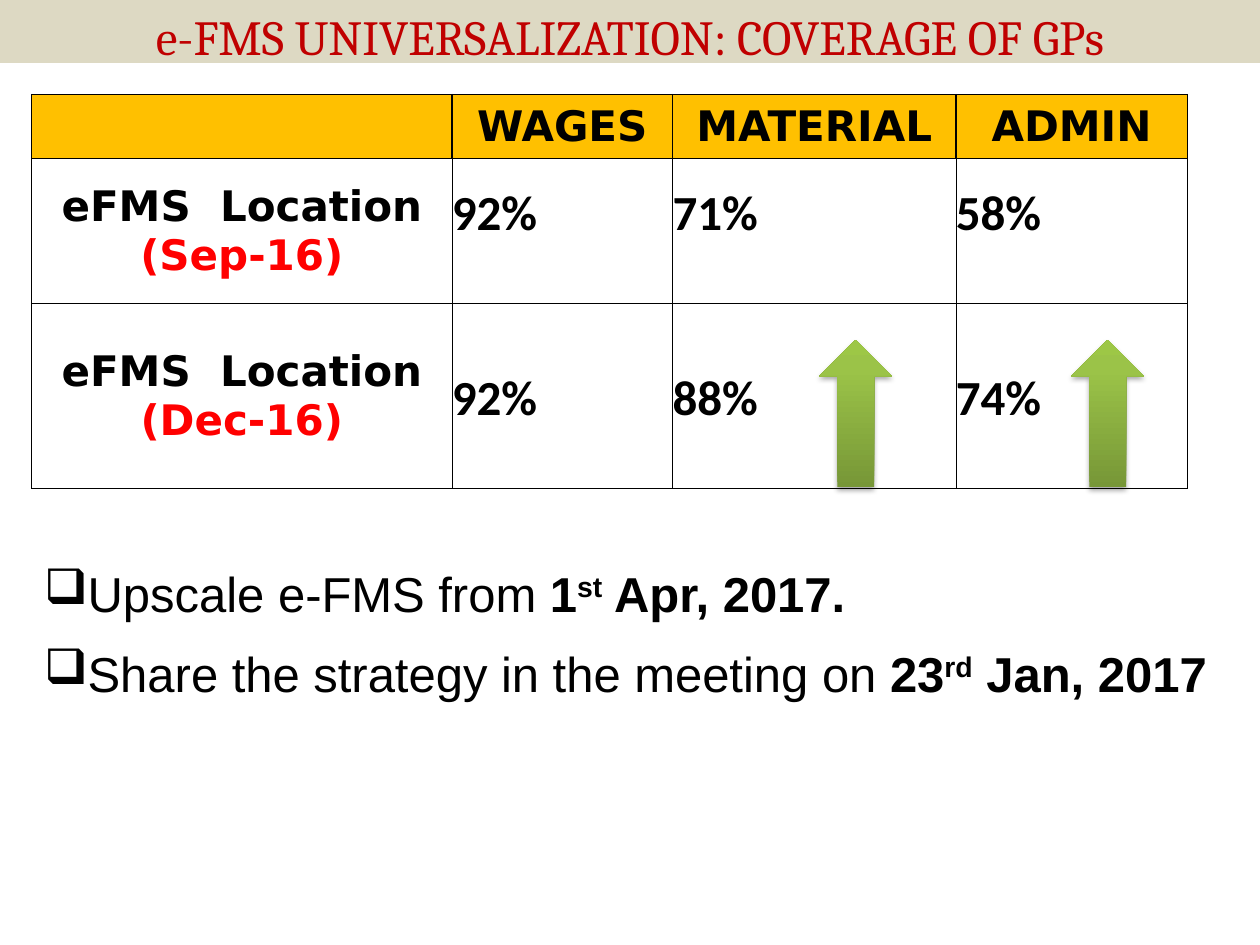
from dataclasses import dataclass
from lxml.etree import SubElement
from pptx import Presentation
from pptx.dml.color import RGBColor as Rgb
from pptx.enum.shapes import MSO_SHAPE as Shape
from pptx.enum.text import MSO_ANCHOR as Anchor, PP_ALIGN as Align
from pptx.oxml import parse_xml
from pptx.oxml.ns import nsdecls, qn
from pptx.util import Cm, Pt


@dataclass(frozen=True)
class Theme:
    """Colours, fonts and type sizes of the slide."""
    band: str = "DDD9C3"
    title: str = "C00000"
    head: str = "FFC000"
    ink: str = "000000"
    date: str = "FF0000"
    ramp: tuple = ((0, "779737"), (80, "9BC348"), (100, "9DC746"))
    serif: str = "Cambria"
    label: str = "DejaVu Sans"
    value: str = "Calibri"
    body: str = "Arial"
    big: int = 28
    mid: int = 24


@dataclass(frozen=True)
class Box:
    """A region in centimetres."""
    x: float
    y: float
    w: float
    h: float

    def emu(self):
        """Return the region as slide lengths."""
        return [Cm(v) for v in (self.x, self.y, self.w, self.h)]


THEME = Theme()
HEADS = ("", "WAGES", "MATERIAL", "ADMIN")
ROWS = (("(Sep-16)", "92%", "71%", "58%"), ("(Dec-16)", "92%", "88%", "74%"))
COLS = (8.47, 4.45, 5.71, 4.66)
TALL = (1.3, 2.92, 3.73)
NOTES = (
    ("Upscale e-FMS from ", "1", "st", " Apr, 2017."),
    ("Share the strategy in the meeting on ", "23", "rd", " Jan, 2017"),
)


def put(item, **vals):
    """Set each named attribute on an item."""
    for name, val in vals.items():
        setattr(item, name, val)


def paint(item, color):
    """Fill an item with one colour."""
    item.fill.solid()
    item.fill.fore_color.rgb = Rgb.from_string(color)


def write(para, text, font, size, color=THEME.ink, bold=False):
    """Add a styled run to a paragraph."""
    run = para.add_run()
    run.text = text
    put(run.font, name=font, size=Pt(size), bold=bold)
    run.font.color.rgb = Rgb.from_string(color)
    return run


def edge(cell, sides):
    """Draw cell borders from a dict of side and width."""
    props = cell._tc.get_or_add_tcPr()
    for spot, (side, width) in enumerate(sides.items()):
        line = parse_xml(
            f'<a:ln{side} {nsdecls("a")} w="{Pt(width)}"><a:solidFill>'
            f'<a:srgbClr val="{THEME.ink}"/></a:solidFill></a:ln{side}>')
        props.insert(spot, line)


def add_title(slide, box):
    """Place the title band."""
    title = slide.shapes.title
    put(title, **dict(zip(("left", "top", "width", "height"), box.emu())))
    paint(title, THEME.band)
    frame = title.text_frame
    put(frame, word_wrap=True, vertical_anchor=Anchor.TOP,
        margin_top=Cm(0.13), margin_bottom=0)
    para = frame.paragraphs[0]
    para.alignment = Align.CENTER
    write(para, "e-FMS UNIVERSALIZATION: COVERAGE OF GPs",
          THEME.serif, THEME.big, THEME.title)


def fill_cell(cell, row, col, text):
    """Write and format one table cell."""
    value = row > 0 and col > 0
    put(cell, margin_left=0, margin_right=0, margin_top=0,
        margin_bottom=Cm(1.2) if value else 0,
        vertical_anchor=Anchor.BOTTOM if value else Anchor.MIDDLE)
    para = cell.text_frame.paragraphs[0]
    para.alignment = Align.LEFT if value else Align.CENTER
    if value:
        write(para, text, THEME.value, THEME.big, bold=True)
    elif row:
        write(para, "eFMS  Location ", THEME.label, THEME.mid, bold=True)
        write(para, text, THEME.label, THEME.mid, THEME.date, True)
    elif text:
        write(para, text, THEME.label, THEME.mid, bold=True)
    if row:
        cell.fill.background()
    else:
        paint(cell, THEME.head)
    edge(cell, {
        "L": 1 if col == 0 or row == 0 else 0.5,
        "R": 1 if row == 0 and col < len(COLS) - 1 else 0.5,
        "T": 0.5,
        "B": 1 if row == len(TALL) - 1 else 0.5,
    })


def add_grid(slide, box):
    """Place the coverage table and its rise arrows."""
    table = slide.shapes.add_table(len(TALL), len(COLS), *box.emu()).table
    put(table, first_row=False, horz_banding=False)
    for col, width in zip(table.columns, COLS):
        col.width = Cm(width)
    for row, height in zip(table.rows, TALL):
        row.height = Cm(height)
    for row, texts in enumerate((HEADS, *ROWS)):
        for col, text in enumerate(texts):
            fill_cell(table.cell(row, col), row, col, text)
    for step in range(2):
        add_rise(slide, Box(box.x + 15.87 + 5.08 * step, box.y + 4.95, 1.48, 2.97))


def add_rise(slide, box):
    """Place one shaded up arrow."""
    arrow = slide.shapes.add_shape(Shape.UP_ARROW, *box.emu())
    arrow.line.fill.background()
    stops = "".join(
        f'<a:gs pos="{pos * 1000}"><a:srgbClr val="{color}"/></a:gs>'
        for pos, color in THEME.ramp)
    props = arrow._element.spPr
    props.insert(2, parse_xml(
        f'<a:gradFill {nsdecls("a")} rotWithShape="1"><a:gsLst>{stops}</a:gsLst>'
        '<a:lin ang="16200000" scaled="0"/></a:gradFill>'))
    props.append(parse_xml(
        f'<a:effectLst {nsdecls("a")}><a:outerShdw blurRad="{Pt(3.1)}" '
        f'dist="{Pt(1.8)}" dir="5400000" rotWithShape="0">'
        f'<a:srgbClr val="{THEME.ink}"><a:alpha val="35000"/></a:srgbClr>'
        '</a:outerShdw></a:effectLst>'))


def add_notes(slide, box):
    """Place the bulleted next steps."""
    frame = slide.shapes.add_textbox(*box.emu()).text_frame
    frame.word_wrap = True
    for spot, (lead, day, mark, rest) in enumerate(NOTES):
        para = frame.add_paragraph() if spot else frame.paragraphs[0]
        put(para, alignment=Align.JUSTIFY, space_before=Pt(6), space_after=Pt(6))
        props = para._p.get_or_add_pPr()
        props.set("marL", str(Cm(0.79)))
        props.set("indent", str(-Cm(0.79)))
        SubElement(props, qn("a:buChar"), char="❑")
        write(para, lead, THEME.body, THEME.big)
        for text in (day, mark, rest):
            run = write(para, text, THEME.body, THEME.big, bold=True)
            if text == mark:
                run._r.get_or_add_rPr().set("baseline", "30000")


def main():
    """Build and save the slide."""
    deck = Presentation()
    put(deck, slide_width=Cm(25.4), slide_height=Cm(19.05))
    slide = deck.slides.add_slide(deck.slide_layouts[5])
    add_title(slide, Box(0, 0, 25.4, 1.27))
    add_grid(slide, Box(0.64, 1.9, sum(COLS), sum(TALL)))
    add_notes(slide, Box(0.64, 11.23, 24.76, 5.69))
    deck.save("out.pptx")


if __name__ == "__main__":
    main()
